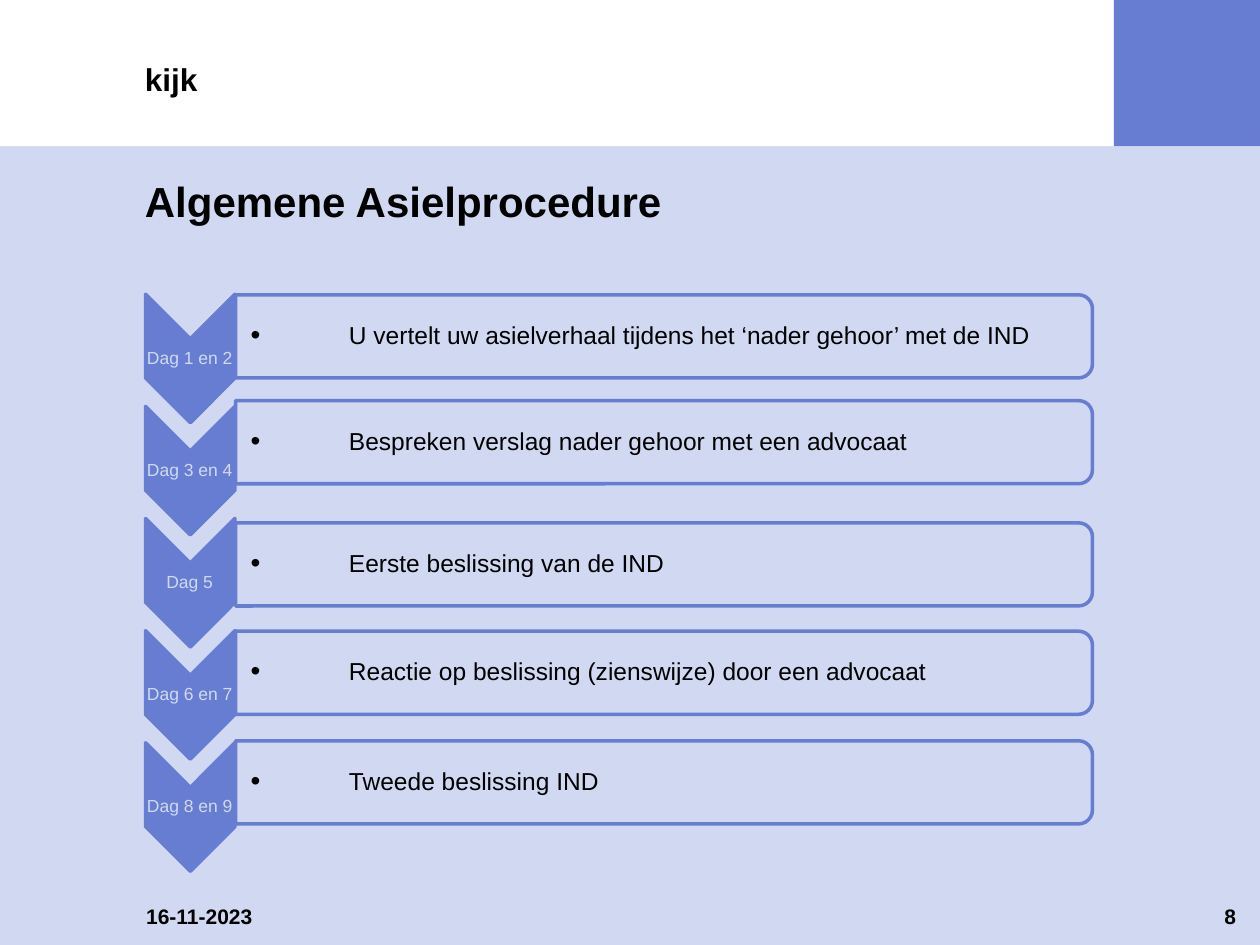
import pptx
import pptx.util
import pptx.dml.color
import pptx.enum.shapes
import pptx.enum.text
import pptx.oxml.ns
import lxml.etree

Inches = pptx.util.Inches
SHAPE = pptx.enum.shapes.MSO_SHAPE
ALIGN = pptx.enum.text.PP_ALIGN
ANCHOR = pptx.enum.text.MSO_ANCHOR

BLUE, PALE, WHITE, BLACK = "667DD1", "D1D8F1", "FFFFFF", "000000"
LEFT, PITCH = 1.15, 0.89

# Day label, step text, middle height of the step box
STEPS = [
    ("Dag 1 en 2", "U vertelt uw asielverhaal tijdens het ‘nader gehoor’ met de IND", 2.67),
    ("Dag 3 en 4", "Bespreken verslag nader gehoor met een advocaat", 3.51),
    ("Dag 5", "Eerste beslissing van de IND", 4.48),
    ("Dag 6 en 7", "Reactie op beslissing (zienswijze) door een advocaat", 5.34),
    ("Dag 8 en 9", "Tweede beslissing IND", 6.21),
]


def color(code):
    return pptx.dml.color.RGBColor.from_string(code)


def assign(item, values):
    for name, value in values.items():
        setattr(item, name, value)


def place(*box):
    return [Inches(n) for n in box]


def write(frame, text, size, bold=False, ink=BLACK, align=ALIGN.LEFT,
          anchor=ANCHOR.TOP, pad=0, left=None):
    edge = Inches(pad)
    assign(frame, {
        "word_wrap": True, "vertical_anchor": anchor,
        "margin_left": edge if left is None else Inches(left),
        "margin_top": edge, "margin_right": edge, "margin_bottom": edge,
    })
    para = frame.paragraphs[0]
    para.alignment = align
    run = para.add_run()
    run.text = text
    assign(run.font, {"name": "Arial", "size": pptx.util.Pt(size), "bold": bold})
    run.font.color.rgb = color(ink)
    return para


def label(shapes, box, text, size, **style):
    frame = shapes.add_textbox(*place(*box)).text_frame
    return write(frame, text, size, **style)


def block(shapes, kind, box, fill, line=None, turn=0):
    shape = shapes.add_shape(kind, *place(*box))
    shape.shadow.inherit = False
    shape.rotation = turn
    shape.fill.solid()
    shape.fill.fore_color.rgb = color(fill)
    if line:
        shape.line.color.rgb = color(line)
        shape.line.width = pptx.util.Pt(2)
    else:
        shape.line.fill.background()
    return shape


def fade(shape, share):
    tone = shape.fill._xPr.find(".//" + pptx.oxml.ns.qn("a:srgbClr"))
    alpha = lxml.etree.SubElement(tone, pptx.oxml.ns.qn("a:alpha"))
    alpha.set("val", str(share * 1000))


def bullet(para, indent):
    props = para._p.get_or_add_pPr()
    props.set("marL", str(Inches(indent)))
    props.set("indent", str(-Inches(indent)))
    for tag, key, value in (("a:buSzPct", "val", "114000"),
                            ("a:buFont", "typeface", "Arial"),
                            ("a:buChar", "char", "•")):
        lxml.etree.SubElement(props, pptx.oxml.ns.qn(tag)).set(key, value)


def step(shapes, index, day, text, middle):
    # Day arrow, turned to point down
    top = 2.49 + index * PITCH
    block(shapes, SHAPE.CHEVRON, (1, top, 1.02, 0.71), BLUE, BLUE, 90)
    para = label(shapes, (LEFT, top + 0.2, 0.71, 0.31), day, 10, ink=PALE,
                 align=ALIGN.CENTER, anchor=ANCHOR.MIDDLE, pad=0.01)
    para.line_spacing = 0.9

    # Step box, turned so that its right corners are round
    frame = block(shapes, SHAPE.ROUND_2_SAME_RECTANGLE,
                  (4.94, middle - 3.4, 0.66, 6.8), PALE, BLUE, 90)
    fade(frame, 90)
    para = label(shapes, (1.87, middle - 0.3, 6.77, 0.6), text, 14,
                 anchor=ANCHOR.MIDDLE, pad=0.01, left=0.12)
    bullet(para, 0.78)
    para.line_spacing = 0.9


def main():
    deck = pptx.Presentation()
    assign(deck, {"slide_width": Inches(10), "slide_height": Inches(7.5)})
    slide = deck.slides.add_slide(deck.slide_layouts[5])
    shapes = slide.shapes

    # Background and top band
    slide.background.fill.solid()
    slide.background.fill.fore_color.rgb = color(PALE)
    block(shapes, SHAPE.RECTANGLE, (0, 0, 10, 1.16), WHITE)
    block(shapes, SHAPE.RECTANGLE, (8.84, 0, 1.16, 1.16), BLUE)

    # Title
    title = shapes.title
    assign(title, dict(zip(("left", "top", "width", "height"),
                           place(LEFT, 1.39, 7.51, 0.94))))
    write(title.text_frame, "Algemene Asielprocedure", 24, bold=True)

    # Procedure steps
    group = shapes.add_group_shape()
    for index, (day, text, middle) in enumerate(STEPS):
        step(group.shapes, index, day, text, middle)

    # Date, page number and header
    label(shapes, (1.16, 7.17, 2.08, 0.33), "16-11-2023", 12, bold=True)
    label(shapes, (9.41, 7.17, 0.4, 0.33), "8", 12, bold=True, align=ALIGN.RIGHT)
    label(shapes, (LEFT, 0.28, 7.51, 0.5), "kijk", 18, bold=True,
          anchor=ANCHOR.BOTTOM)

    deck.save("out.pptx")


if __name__ == "__main__":
    main()
